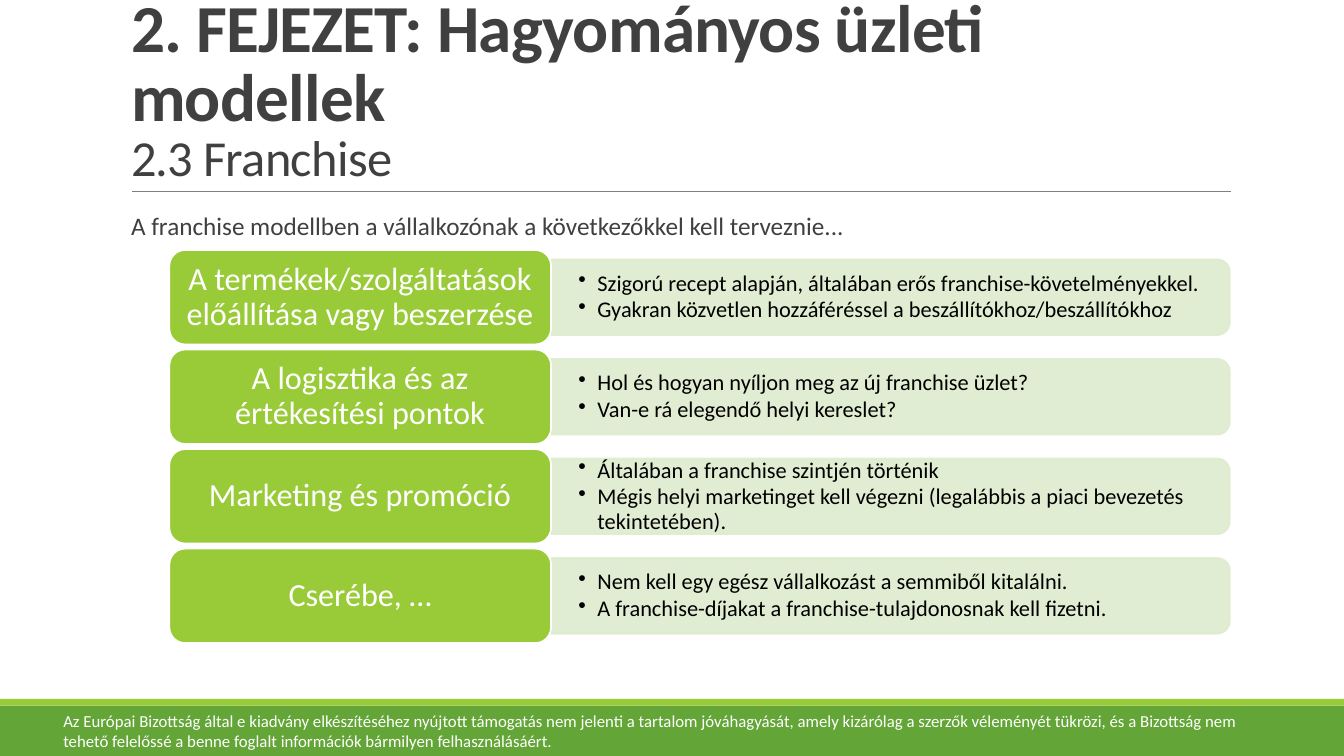
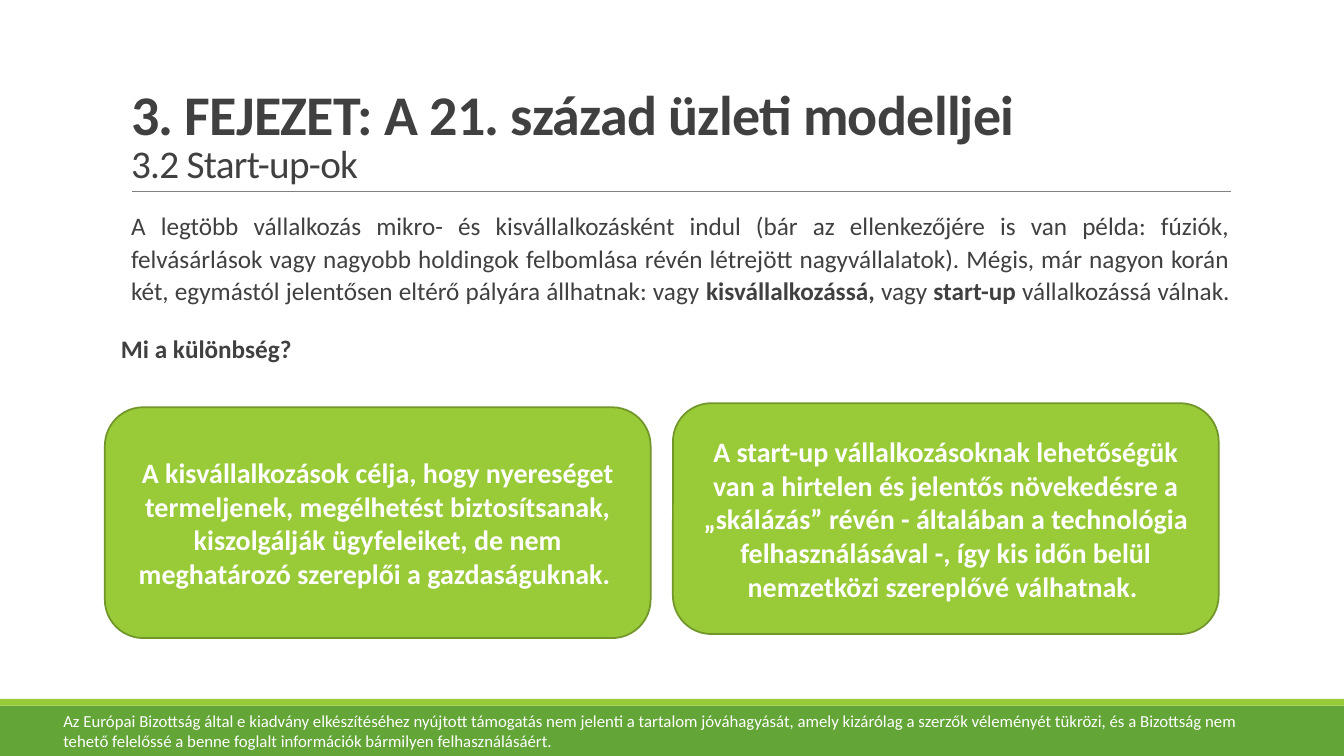
from collections import namedtuple

from pptx import Presentation
from pptx.dml.color import RGBColor
from pptx.enum.shapes import MSO_CONNECTOR, MSO_SHAPE
from pptx.enum.text import MSO_ANCHOR, MSO_AUTO_SIZE, PP_ALIGN
from pptx.oxml.ns import qn
from pptx.util import Inches, Pt
from lxml import etree

RECTANGLE = MSO_SHAPE.RECTANGLE
ROUNDED = MSO_SHAPE.ROUNDED_RECTANGLE
ROUNDED_TOP = MSO_SHAPE.ROUND_2_SAME_RECTANGLE
STRAIGHT = MSO_CONNECTOR.STRAIGHT
TOP, MIDDLE, BOTTOM = MSO_ANCHOR.TOP, MSO_ANCHOR.MIDDLE, MSO_ANCHOR.BOTTOM
LEFT, CENTER, JUSTIFY = PP_ALIGN.LEFT, PP_ALIGN.CENTER, PP_ALIGN.JUSTIFY
NO_AUTOFIT = MSO_AUTO_SIZE.NONE

FONT = "Calibri"
COLORS = {
    "band": "63A537", "accent": "99CB38", "accent_edge": "719629", "panel": "DEECCE",
    "rule": "808080", "text": "404040", "detail": "000000", "white": "FFFFFF",
}

COLUMNS, ROWS = 80, 45
CELL = Inches(7.5) / ROWS
Box = namedtuple("Box", "left top width height")

BAND = Box(0, 42, COLUMNS, 3)
STRIPE = Box(0, 41.6, COLUMNS, 0.4)
RULE = Box(7.86, 11.4, 65.4, 0)
TITLE = Box(7.2, 1.86, 66, 9.54)
BODY = Box(7.2, 12.12, 66, 26.4)
DISCLAIMER = Box(3.18, 42, 73.8, 3)
TOPICS = Box(10.08, 14.88, 63.12, 23.4)
CARDS = Box(6.24, 24, 66.3, 13.98)

DISCLAIMER_TEXT = (
    "Az Európai Bizottság által e kiadvány elkészítéséhez nyújtott támogatás nem jelenti a "
    "tartalom jóváhagyását, amely kizárólag a szerzők véleményét tükrözi, és a Bizottság nem "
    "tehető felelőssé a benne foglalt információk bármilyen felhasználásáért."
)
FRANCHISE_TOPICS = [
    ("A termékek/szolgáltatások előállítása vagy beszerzése",
     ["Szigorú recept alapján, általában erős franchise-követelményekkel.",
      "Gyakran közvetlen hozzáféréssel a beszállítókhoz/beszállítókhoz"]),
    ("A logisztika és az értékesítési pontok",
     ["Hol és hogyan nyíljon meg az új franchise üzlet?",
      "Van-e rá elegendő helyi kereslet?"]),
    ("Marketing és promóció",
     ["Általában a franchise szintjén történik",
      "Mégis helyi marketinget kell végezni (legalábbis a piaci bevezetés tekintetében)."]),
    ("Cserébe, …",
     ["Nem kell egy egész vállalkozást a semmiből kitalálni.",
      "A franchise-díjakat a franchise-tulajdonosnak kell fizetni."]),
]
STARTUP_INTRO = [
    ("A legtöbb vállalkozás mikro- és kisvállalkozásként indul (bár az ellenkezőjére is van "
     "példa: fúziók, felvásárlások vagy nagyobb holdingok felbomlása révén létrejött "
     "nagyvállalatok). Mégis, már nagyon korán két, egymástól jelentősen eltérő pályára "
     "állhatnak: vagy ", False),
    ("kisvállalkozássá, ", True),
    ("vagy", False),
    (" start-up", True),
    (" vállalkozássá válnak. ", False),
]
STARTUP_CARDS = [
    (0.24, "A kisvállalkozások célja, hogy nyereséget termeljenek, megélhetést biztosítsanak, "
           "kiszolgálják ügyfeleiket, de nem meghatározó szereplői a gazdaságuknak. "),
    (0, "A start-up vállalkozásoknak lehetőségük van a hirtelen és jelentős növekedésre a "
        "„skálázás” révén - általában a technológia felhasználásával -, így kis időn belül "
        "nemzetközi szereplővé válhatnak. "),
]


def rgb(name):
    """Return the named colour."""
    return RGBColor.from_string(COLORS[name])


def emu(box):
    """Turn a box in grid cells into slide lengths."""
    return [round(value * CELL) for value in box]


def place(shape, box):
    """Move a shape to a box."""
    shape.left, shape.top, shape.width, shape.height = emu(box)


def add_run(paragraph, text, size, color, bold=False):
    """Add one formatted run and return it."""
    run = paragraph.add_run()
    run.text = text
    run.font.name, run.font.size, run.font.bold = FONT, Pt(size), bold
    run.font.color.rgb = rgb(color)
    return run


def format_paragraph(paragraph, align=LEFT, spacing=1.0, before=0, after=0,
                     margin=0, indent=0, bullet=None):
    """Set alignment, spacing, indents and bullet of a paragraph."""
    paragraph.alignment, paragraph.line_spacing = align, spacing
    paragraph.space_before, paragraph.space_after = Pt(before), Pt(after)
    properties = paragraph._p.get_or_add_pPr()
    properties.set("marL", str(Inches(margin)))
    properties.set("indent", str(Inches(indent)))
    if bullet:
        etree.SubElement(properties, qn("a:buChar")).set("char", bullet)
    else:
        etree.SubElement(properties, qn("a:buNone"))


def prepare_frame(shape, anchor=TOP, horizontal=0.1, vertical=0.05):
    """Set wrapping, anchor and insets, and return the text frame."""
    frame = shape.text_frame
    frame.word_wrap, frame.auto_size = True, NO_AUTOFIT
    frame.vertical_anchor = anchor
    frame.margin_left = frame.margin_right = Inches(horizontal)
    frame.margin_top = frame.margin_bottom = Inches(vertical)
    return frame


def add_block(slide, kind, box, fill, line=None):
    """Add a filled shape without shadow."""
    shape = slide.shapes.add_shape(kind, *emu(box))
    shape.shadow.inherit = False
    shape.fill.solid()
    shape.fill.fore_color.rgb = rgb(fill)
    if line:
        shape.line.color.rgb = rgb(line)
        shape.line.width = Pt(1.25)
    else:
        shape.line.fill.background()
    return shape


def add_rule(slide, box):
    """Add the thin line below the title."""
    left, top, width, height = emu(box)
    rule = slide.shapes.add_connector(STRAIGHT, left, top, left + width, top + height)
    rule.line.color.rgb = rgb("rule")
    rule.line.width = Pt(0.5)
    etree.SubElement(rule.element.spPr, qn("a:effectLst"))
    return rule


def furnish_layout(layout, slide):
    """Place the layout's placeholders, bands and title rule."""
    for placeholder, box in zip(layout.placeholders, (TITLE, BODY)):
        place(placeholder, box)
    decorations = [
        add_block(slide, RECTANGLE, BAND, "band"),
        add_block(slide, RECTANGLE, STRIPE, "accent"),
        add_rule(slide, RULE),
    ]
    for number, shape in enumerate(decorations, start=100):
        shape.element[0][0].set("id", str(number))
        layout.shapes.element.append(shape.element)


def fill_title(slide, chapter, section, chapter_size, section_size):
    """Write the bold chapter and the lighter section into the title."""
    frame = prepare_frame(slide.shapes.title, BOTTOM)
    paragraph = frame.paragraphs[0]
    format_paragraph(paragraph, spacing=0.85)
    chapter_run = add_run(paragraph, chapter, chapter_size, "text", True)
    paragraph.add_line_break()
    section_run = add_run(paragraph, section, section_size, "text")
    for run in (chapter_run, section_run):
        run._r.get_or_add_rPr().set("spc", "-50")


def fill_intro(slide, runs):
    """Write the justified opening paragraph and return the body frame."""
    frame = prepare_frame(slide.placeholders[1], horizontal=0)
    paragraph = frame.paragraphs[0]
    format_paragraph(paragraph, JUSTIFY, 1.07, 12, 8, margin=0.1)
    for text, bold in runs:
        add_run(paragraph, text, 18, "text", bold)
    return frame


def add_disclaimer(slide):
    """Write the funding disclaimer over the bottom band."""
    frame = prepare_frame(slide.shapes.add_textbox(*emu(DISCLAIMER)))
    add_run(frame.paragraphs[0], DISCLAIMER_TEXT, 12, "white")


def add_panel(slide, box):
    """Add a pale translucent panel with rounded right corners."""
    upright = Box(box.left + (box.width - box.height) / 2,
                  box.top + (box.height - box.width) / 2, box.height, box.width)
    panel = add_block(slide, ROUNDED_TOP, upright, "panel", "panel")
    panel.rotation = 90
    for color in panel.element.spPr.iter(qn("a:srgbClr")):
        etree.SubElement(color, qn("a:alpha")).set("val", "90000")


def add_topic(slide, box, heading, details):
    """Add a green heading with its bulleted panel."""
    label_width = 0.36 * box.width
    left, width = box.left + label_width, box.width - label_width
    add_panel(slide, Box(left, box.top + 0.1 * box.height, width, 0.8 * box.height))
    text_box = Box(left, box.top + 0.14 * box.height, width, 0.72 * box.height)
    frame = prepare_frame(slide.shapes.add_textbox(*emu(text_box)), MIDDLE, 0.27, 0.14)
    for index, detail in enumerate(details):
        paragraph = frame.add_paragraph() if index else frame.paragraphs[0]
        format_paragraph(paragraph, spacing=0.9, after=2, margin=0.19, indent=-0.19, bullet="•")
        add_run(paragraph, detail, 16, "detail")
    label = add_block(slide, ROUNDED, box._replace(width=label_width), "accent", "white")
    paragraph = prepare_frame(label, MIDDLE).paragraphs[0]
    format_paragraph(paragraph, CENTER, 0.9)
    add_run(paragraph, heading, 23, "white")


def add_topics(slide, box, topics, gap=0.3):
    """Stack the topics in equal rows."""
    height = (box.height - gap * (len(topics) - 1)) / len(topics)
    for index, (heading, details) in enumerate(topics):
        row = Box(box.left, box.top + index * (height + gap), box.width, height)
        add_topic(slide, row, heading, details)


def add_cards(slide, box, cards):
    """Set the cards side by side, each lowered by its own drop."""
    width = 0.49 * box.width
    step = (box.width - width) / (len(cards) - 1)
    height = box.height - max(drop for drop, _ in cards)
    for index, (drop, text) in enumerate(cards):
        card_box = Box(box.left + index * step, box.top + drop, width, height)
        card = add_block(slide, ROUNDED, card_box, "accent", "accent_edge")
        paragraph = prepare_frame(card, MIDDLE).paragraphs[0]
        format_paragraph(paragraph, CENTER)
        add_run(paragraph, text, 20, "white", True)


def build_franchise(slide):
    """Build the franchise slide."""
    fill_title(slide, "2. FEJEZET: Hagyományos üzleti modellek ", "2.3 Franchise", 48, 36)
    fill_intro(slide, [("A franchise modellben a vállalkozónak a következőkkel kell "
                        "terveznie...", False)])
    add_disclaimer(slide)
    add_topics(slide, TOPICS, FRANCHISE_TOPICS)


def build_startups(slide):
    """Build the start-up slide."""
    fill_title(slide, "3. FEJEZET: A 21. század üzleti modelljei", "3.2 Start-up-ok", 40, 28)
    place(slide.placeholders[1], BODY._replace(height=15.18))
    question = fill_intro(slide, STARTUP_INTRO).add_paragraph()
    format_paragraph(question, JUSTIFY, before=12, after=2)
    add_run(question, "Mi a különbség?", 18, "text", True)
    add_disclaimer(slide)
    add_cards(slide, CARDS, STARTUP_CARDS)


def main():
    """Build and save the presentation."""
    presentation = Presentation()
    presentation.slide_width = round(COLUMNS * CELL)
    presentation.slide_height = round(ROWS * CELL)
    layout = presentation.slide_layouts[1]
    franchise, startups = [presentation.slides.add_slide(layout) for _ in range(2)]
    furnish_layout(layout, franchise)
    build_franchise(franchise)
    build_startups(startups)
    presentation.save("out.pptx")


if __name__ == "__main__":
    main()
